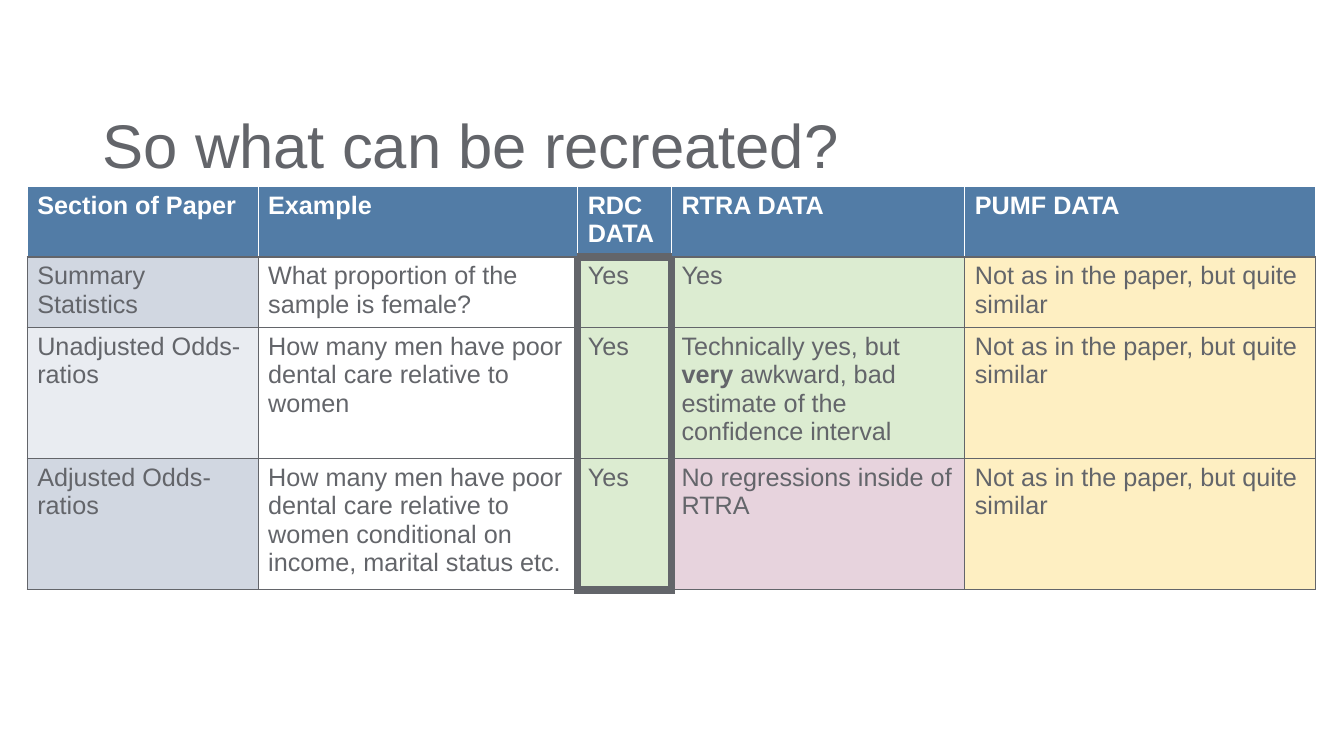
import dataclasses

import lxml.etree
import pptx
import pptx.dml.color
import pptx.enum.text
import pptx.oxml.ns
import pptx.util

Inches = pptx.util.Inches
Pt = pptx.util.Pt


@dataclasses.dataclass(frozen=True)
class Theme:
    font: str = "Arial"
    title_size: int = 44
    cell_size: int = 18
    ink: str = "63656A"
    white: str = "FFFFFF"
    header: str = "527CA6"
    band_dark: str = "D1D7E1"
    band_light: str = "E9ECF1"
    yes: str = "DCECD1"
    partly: str = "FEEFC2"
    no: str = "E7D3DD"
    thin: int = 1
    thick: int = 6


THEME = Theme()
RDC_COLUMN = 2
COLUMN_WIDTHS = [2.29, 3.17, 0.93, 2.91, 3.48]
ROW_HEIGHTS = [0.66, 0.66, 1.11, 1.27]
HEADERS = ["Section of Paper", "Example", "RDC DATA", "RTRA DATA", "PUMF DATA"]
SIMILAR = "Not as in the paper, but quite similar"
SECTIONS = [
    ["Summary Statistics", "What proportion of the sample is female?",
     "Yes", "Yes", SIMILAR],
    ["Unadjusted Odds-ratios",
     "How many men have poor dental care relative to women", "Yes",
     ["Technically yes, but ", "very",
      " awkward, bad estimate of the confidence interval"], SIMILAR],
    ["Adjusted Odds-ratios",
     "How many men have poor dental care relative to women conditional on "
     "income, marital status etc.",
     "Yes", "No regressions inside of RTRA", SIMILAR],
]
RTRA_FILLS = [THEME.yes, THEME.yes, THEME.no]


def rgb(color):
    return pptx.dml.color.RGBColor.from_string(color)


def add_run(p, text, size=THEME.cell_size, color=THEME.ink, bold=False):
    r = p.add_run()
    r.text = text
    r.font.name = THEME.font
    r.font.size = Pt(size)
    r.font.bold = bold
    r.font.color.rgb = rgb(color)


def add_title(slide, text):
    sp = slide.shapes.add_textbox(
        Inches(0.92), Inches(1.09), Inches(11.5), Inches(0.76))
    tf = sp.text_frame
    tf.word_wrap = True
    tf.vertical_anchor = pptx.enum.text.MSO_ANCHOR.MIDDLE
    p = tf.paragraphs[0]
    p.line_spacing = 0.9
    add_run(p, text, size=THEME.title_size)


def add_border(cell, side, color, width):
    qn = pptx.oxml.ns.qn
    ln = lxml.etree.SubElement(
        cell._tc.get_or_add_tcPr(), qn(f"a:ln{side}"), w=str(Pt(width)))
    fill = lxml.etree.SubElement(ln, qn("a:solidFill"))
    lxml.etree.SubElement(fill, qn("a:srgbClr"), val=color)


def border_width(row, column, side):
    last_row = len(SECTIONS)
    edges = {
        "L": row > 0 and column in (RDC_COLUMN, RDC_COLUMN + 1),
        "R": row > 0 and column in (RDC_COLUMN - 1, RDC_COLUMN),
        "T": row == 1 and column == RDC_COLUMN,
        "B": row in (0, last_row) and column == RDC_COLUMN,
    }
    return THEME.thick if edges[side] else THEME.thin


def fill_color(row, column):
    if row == 0:
        return THEME.header
    band = THEME.band_dark if row % 2 else THEME.band_light
    return [band, THEME.white, THEME.yes, RTRA_FILLS[row - 1],
            THEME.partly][column]


def fill_cell(cell, content, row, column):
    is_header = row == 0
    for side in "LRTB":
        color = THEME.white if is_header and side != "B" else THEME.ink
        add_border(cell, side, color, border_width(row, column, side))
    cell.fill.solid()
    cell.fill.fore_color.rgb = rgb(fill_color(row, column))
    p = cell.text_frame.paragraphs[0]
    parts = [content] if isinstance(content, str) else content
    for i, text in enumerate(parts):
        add_run(p, text, color=THEME.white if is_header else THEME.ink,
                bold=is_header or i % 2 == 1)


def add_comparison_table(slide):
    rows = [HEADERS] + SECTIONS
    table = slide.shapes.add_table(
        len(rows), len(HEADERS), Inches(0.27), Inches(1.85),
        Inches(sum(COLUMN_WIDTHS)), Inches(sum(ROW_HEIGHTS))).table
    for column, width in zip(table.columns, COLUMN_WIDTHS):
        column.width = Inches(width)
    for row, height in zip(table.rows, ROW_HEIGHTS):
        row.height = Inches(height)
    for i, contents in enumerate(rows):
        for j, content in enumerate(contents):
            fill_cell(table.cell(i, j), content, i, j)


def main():
    prs = pptx.Presentation()
    prs.slide_width = Inches(13.33)
    prs.slide_height = Inches(7.5)
    slide = prs.slides.add_slide(prs.slide_layouts[6])
    add_title(slide, "So what can be recreated?")
    add_comparison_table(slide)
    prs.save("out.pptx")


if __name__ == "__main__":
    main()
